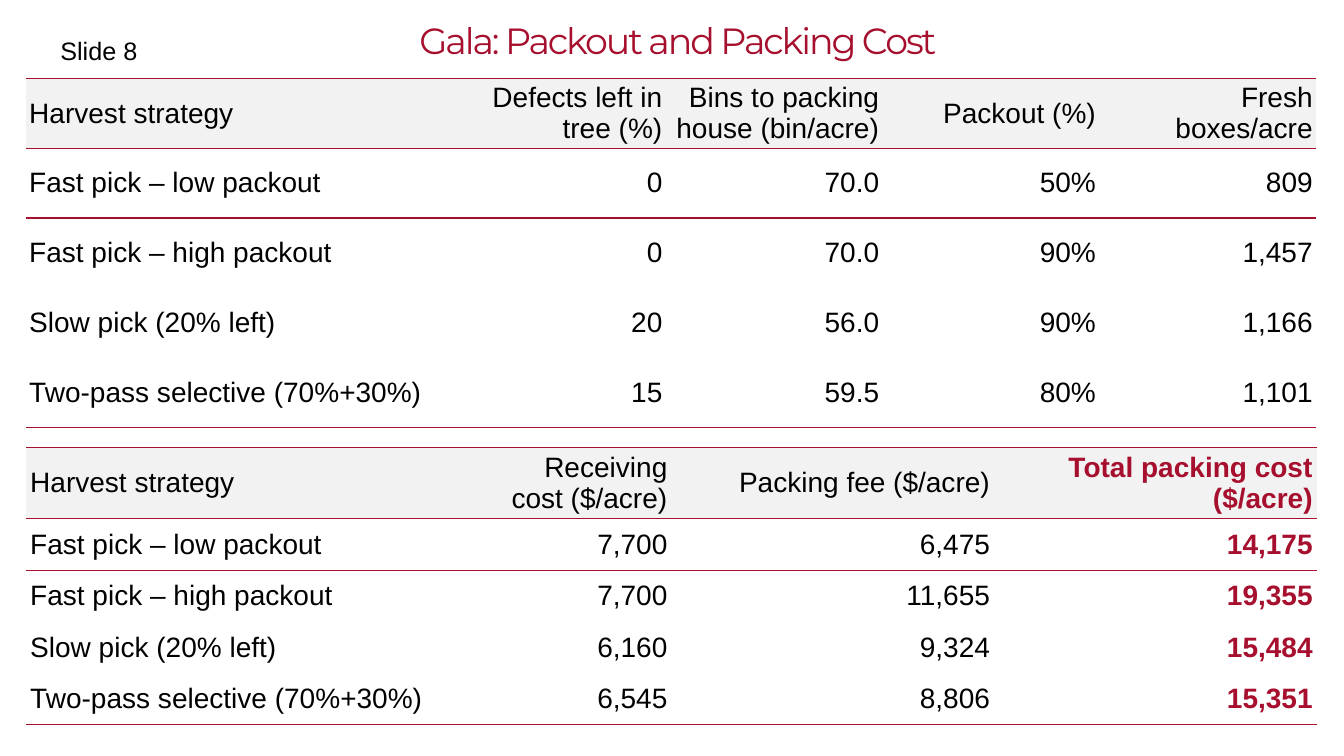
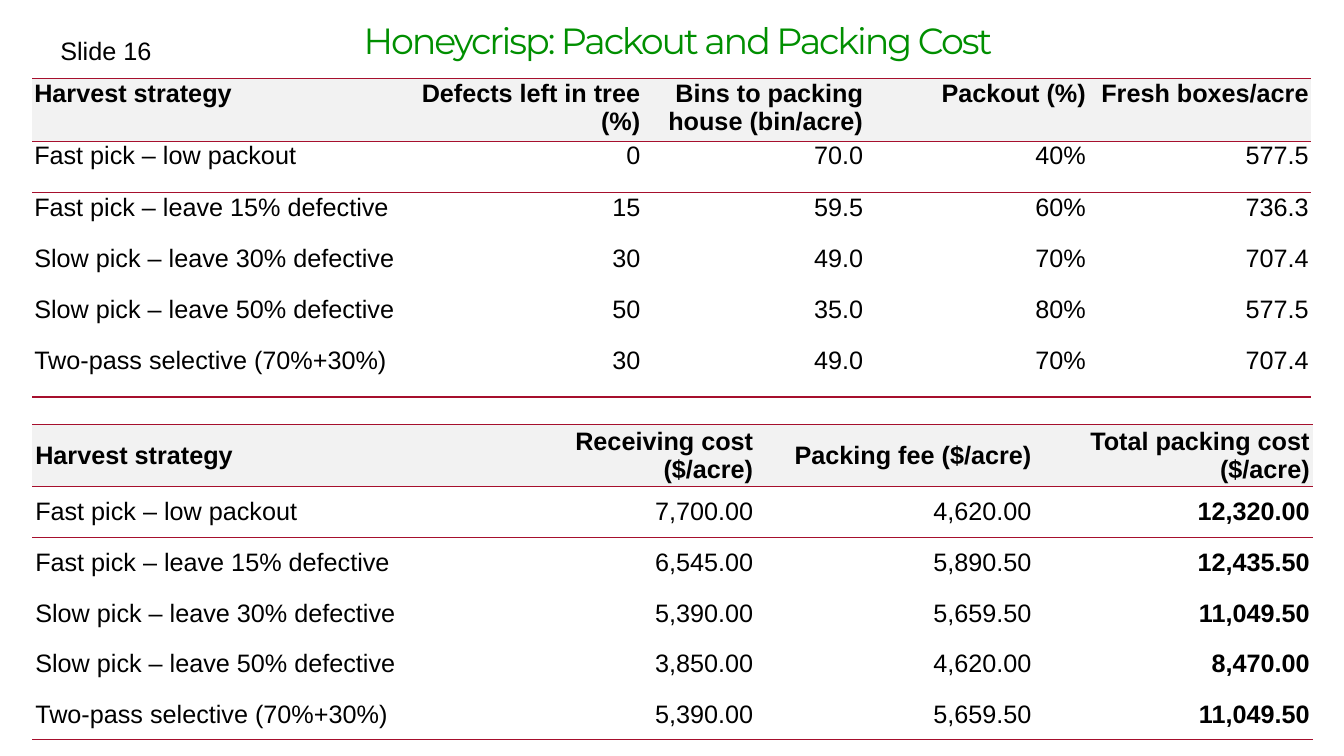
from lxml import etree
from pptx import Presentation
from pptx.dml.color import RGBColor
from pptx.enum.text import MSO_ANCHOR as Anchor, PP_ALIGN as Align
from pptx.oxml.ns import qn
from pptx.util import Inches, Pt

CRIMSON, GREEN, BLACK, HEADER_GREY = "A60F2D", "008F00", "000000", "F2F2F2"
BODY_FONT, TITLE_FONT = "Arial", "Montserrat"
NO_STYLE = "{2D5ABB26-0587-4C30-8999-92F81FD0307C}"
PACKOUT_HEADS = ["Harvest strategy", "Defects left in tree (%)",
                 "Bins to packing house (bin/acre)", "Packout (%)",
                 "Fresh boxes/acre"]
COST_HEADS = ["Harvest strategy", "Receiving cost ($/acre)",
              "Packing fee ($/acre)", "Total packing cost ($/acre)"]


def rgb(color):
    return RGBColor.from_string(color)


def write(tf, text, size, color=BLACK, font=BODY_FONT, bold=False,
          align=Align.LEFT, line_spacing=None, tracking=None):
    p = tf.paragraphs[0]
    p.alignment = align
    if line_spacing:
        p.line_spacing = line_spacing
    r = p.add_run()
    r.text = text
    r.font.size, r.font.name, r.font.bold = Pt(size), font, bold
    r.font.color.rgb = rgb(color)
    if tracking:
        r.font._element.set("spc", str(int(tracking * 100)))


def add_text(s, box, text, size, inset=None, **fmt):
    tf = s.shapes.add_textbox(*map(Inches, box)).text_frame
    tf.word_wrap = True
    if inset is not None:
        tf.margin_left = tf.margin_right = Inches(inset)
        tf.margin_top = tf.margin_bottom = Inches(inset)
    write(tf, text, size, **fmt)


def add_rule(cell, side):
    """Draw a 1 pt crimson border; side is lnT or lnB."""
    ln = etree.SubElement(cell._tc.get_or_add_tcPr(), qn("a:" + side), w=str(Pt(1)))
    fill = etree.SubElement(ln, qn("a:solidFill"))
    etree.SubElement(fill, qn("a:srgbClr"), val=CRIMSON)


def add_data_table(s, box, col_widths, head_height, heads, rows, size,
                   inset=(0.03, 0.01), anchor=Anchor.MIDDLE, head_bold=False,
                   total_color=None):
    """Ruled table; total_color sets the last column in bold."""
    lines = [heads, *rows]
    frame = s.shapes.add_table(len(lines), len(heads), *map(Inches, box))
    table = frame.table
    table.first_row = table.horz_banding = False
    table._tbl.tblPr.find(qn("a:tableStyleId")).text = NO_STYLE
    for col, width in zip(table.columns, col_widths):
        col.width = Inches(width)
    row_height = (box[3] - head_height) / len(rows)
    for i, line in enumerate(lines):
        is_head = i == 0
        table.rows[i].height = Inches(head_height if is_head else row_height)
        for j, text in enumerate(line):
            cell = table.cell(i, j)
            cell.vertical_anchor = anchor
            cell.margin_left = cell.margin_right = Inches(inset[0])
            cell.margin_top = cell.margin_bottom = Inches(inset[1])
            if i <= 1:
                add_rule(cell, "lnT")
            if is_head or i == len(rows):
                add_rule(cell, "lnB")
            if is_head:
                cell.fill.solid()
                cell.fill.fore_color.rgb = rgb(HEADER_GREY)
            else:
                cell.fill.background()
            is_total = total_color is not None and j == len(heads) - 1
            write(cell.text_frame, text, size,
                  color=total_color if is_total else BLACK,
                  bold=is_total or (is_head and head_bold),
                  align=Align.RIGHT if j else Align.LEFT)


def add_cost_slide(prs, number, variety, color):
    s = prs.slides.add_slide(prs.slide_layouts[6])
    add_text(s, (0.32, 0.23, 12.81, 0.55), f"{variety}: Packout and Packing Cost",
             26, inset=0, color=color, font=TITLE_FONT, align=Align.CENTER,
             line_spacing=0.9, tracking=-1.5)
    add_text(s, (0.5, 0.3, 2, 0.4), f"Slide {number}", 18)
    return s


def with_names(names, values):
    return [[name, *row] for name, row in zip(names, values)]


def build_gala(prs):
    s = add_cost_slide(prs, 8, "Gala", CRIMSON)
    names = ["Fast pick – low packout", "Fast pick – high packout",
             "Slow pick (20% left)", "Two-pass selective (70%+30%)"]
    packout = [["0", "70.0", "50%", "809"],
               ["0", "70.0", "90%", "1,457"],
               ["20", "56.0", "90%", "1,166"],
               ["15", "59.5", "80%", "1,101"]]
    cost = [["7,700", "6,475", "14,175"],
            ["7,700", "11,655", "19,355"],
            ["6,160", "9,324", "15,484"],
            ["6,545", "8,806", "15,351"]]
    add_data_table(s, (0.26, 0.78, 12.81, 3.46), [4.19] + [2.15] * 4, 0.69,
                   PACKOUT_HEADS, with_names(names, packout), 20)
    add_data_table(s, (0.26, 4.44, 12.81, 2.74), [4.61, 1.79, 3.2, 3.2], 0.7,
                   COST_HEADS, with_names(names, cost), 20,
                   inset=(0.04, 0.02), total_color=CRIMSON)


def build_honeycrisp(prs):
    s = add_cost_slide(prs, 16, "Honeycrisp", GREEN)
    names = ["Fast pick – low packout", "Fast pick – leave 15% defective",
             "Slow pick – leave 30% defective", "Slow pick – leave 50% defective",
             "Two-pass selective (70%+30%)"]
    packout = [["0", "70.0", "40%", "577.5"],
               ["15", "59.5", "60%", "736.3"],
               ["30", "49.0", "70%", "707.4"],
               ["50", "35.0", "80%", "577.5"],
               ["30", "49.0", "70%", "707.4"]]
    cost = [["7,700.00", "4,620.00", "12,320.00"],
            ["6,545.00", "5,890.50", "12,435.50"],
            ["5,390.00", "5,659.50", "11,049.50"],
            ["3,850.00", "4,620.00", "8,470.00"],
            ["5,390.00", "5,659.50", "11,049.50"]]
    add_data_table(s, (0.32, 0.78, 12.69, 3.15), [3.84] + [2.21] * 4, 0.61,
                   PACKOUT_HEADS, with_names(names, packout), 18,
                   inset=(0.02, 0.01), anchor=Anchor.TOP, head_bold=True)
    add_data_table(s, (0.32, 4.21, 12.69, 3.13), [4.42] + [2.76] * 3, 0.62,
                   COST_HEADS, with_names(names, cost), 18,
                   head_bold=True, total_color=BLACK)


def main():
    prs = Presentation()
    prs.slide_width, prs.slide_height = Inches(13.33), Inches(7.5)
    build_gala(prs)
    build_honeycrisp(prs)
    prs.save("out.pptx")


if __name__ == "__main__":
    main()
